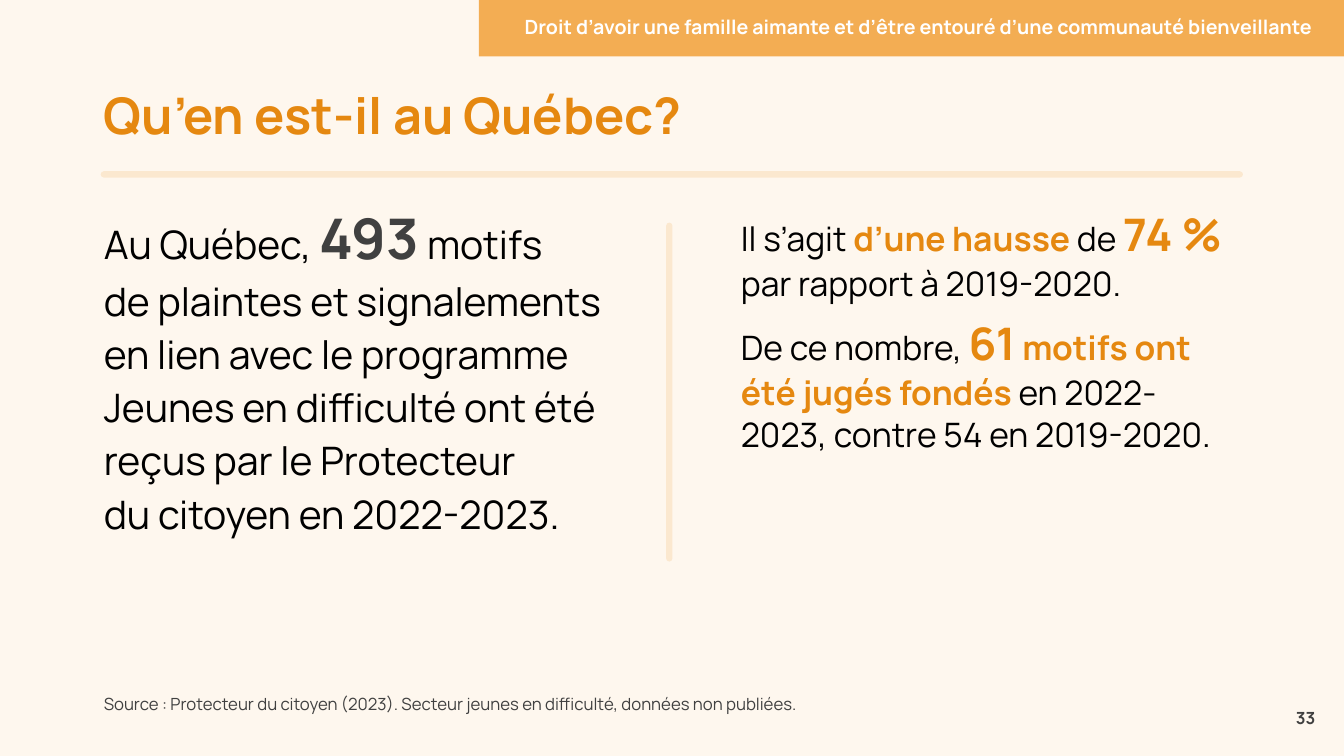
from lxml import etree
from pptx import Presentation
from pptx.dml.color import RGBColor
from pptx.enum.shapes import MSO_CONNECTOR, MSO_SHAPE
from pptx.enum.text import MSO_ANCHOR, MSO_AUTO_SIZE, PP_ALIGN
from pptx.oxml.ns import qn
from pptx.util import Pt

STRAIGHT = MSO_CONNECTOR.STRAIGHT
RECT = MSO_SHAPE.RECTANGLE
TOP, MIDDLE, BOTTOM = MSO_ANCHOR.TOP, MSO_ANCHOR.MIDDLE, MSO_ANCHOR.BOTTOM
LEFT, RIGHT = PP_ALIGN.LEFT, PP_ALIGN.RIGHT
NO_AUTOSIZE = MSO_AUTO_SIZE.NONE

COLORS = {
    "background": "FEF7EE",
    "band": "F3AD53",
    "accent": "E58810",
    "gray": "404040",
    "black": "000000",
    "white": "FFFFFF",
}
FONT = "Manrope"
MARGIN = 74.16


def rgb(name):
    return RGBColor.from_string(COLORS[name])


class SlideBuilder:
    def __init__(self, prs):
        self.slide = prs.slides.add_slide(prs.slide_layouts[5])
        fill = self.slide.background.fill
        fill.solid()
        fill.fore_color.rgb = rgb("background")

    def fill_text(self, sp, paragraphs, anchor=TOP, insets=(0, 0, 0, 0), **para_format):
        tf = sp.text_frame
        left, top, right, bottom = map(Pt, insets)
        frame_format = {
            "word_wrap": True, "auto_size": NO_AUTOSIZE, "vertical_anchor": anchor,
            "margin_left": left, "margin_top": top,
            "margin_right": right, "margin_bottom": bottom,
        }
        for name, value in frame_format.items():
            setattr(tf, name, value)
        for i, runs in enumerate(paragraphs):
            p = tf.add_paragraph() if i else tf.paragraphs[0]
            for name, value in {"alignment": LEFT, "space_before": Pt(0), **para_format}.items():
                setattr(p, name, value)
            for text, size, color, bold in runs:
                for j, line in enumerate(text.split("\n")):
                    if j:
                        p.add_line_break()
                    r = p.add_run()
                    r.text = line
                    for name, value in {"name": FONT, "size": Pt(size), "bold": bold}.items():
                        setattr(r.font, name, value)
                    r.font.color.rgb = rgb(color)

    def title(self, box, paragraphs, **options):
        sp = self.slide.shapes.title
        for name, value in zip(("left", "top", "width", "height"), box):
            setattr(sp, name, Pt(value))
        self.fill_text(sp, paragraphs, **options)

    def text(self, box, paragraphs, **options):
        self.fill_text(self.slide.shapes.add_textbox(*map(Pt, box)), paragraphs, **options)

    def band(self, box, paragraphs, **options):
        sp = self.slide.shapes.add_shape(RECT, *map(Pt, box))
        sp.shadow.inherit = False
        sp.fill.solid()
        sp.fill.fore_color.rgb = rgb("band")
        sp.line.fill.background()
        self.fill_text(sp, paragraphs, **options)

    def rule(self, *ends):
        line = self.slide.shapes.add_connector(STRAIGHT, *map(Pt, ends))
        line.line.width = Pt(4.5)
        line.line.color.rgb = rgb("band")
        sp_pr = line._element.spPr
        etree.SubElement(sp_pr, qn("a:effectLst"))
        sp_pr.find(qn("a:ln")).set("cap", "rnd")
        color = next(sp_pr.iter(qn("a:srgbClr")))
        etree.SubElement(color, qn("a:alpha")).set("val", "20000")


def main():
    prs = Presentation()
    prs.slide_width, prs.slide_height = Pt(960), Pt(540)
    s = SlideBuilder(prs)

    s.title((MARGIN, 52.56, 771.84, 64.08),
            [[("Qu’en est-il au Québec?", 36, "accent", True)]],
            anchor=MIDDLE, line_spacing=0.9)
    s.rule(MARGIN, 124.56, 885.6, 124.56)
    s.text((MARGIN, 465.84, 592.56, 43.92),
           [[("Source : Protecteur du citoyen (2023). Secteur jeunes en difficulté, "
              "données non publiées.", 12, "gray", False)]],
           anchor=BOTTOM, line_spacing=1.1)
    s.text((299.52, 505.44, 640.08, 15.12), [[("33", 12, "gray", True)]],
           anchor=MIDDLE, alignment=RIGHT)
    s.rule(478.08, 398.88, 478.08, 161.28)
    s.text((MARGIN, 155.52, 361.44, 266.4),
           [[("Au Québec, ", 28, "black", False),
             ("493", 40, "gray", True),
             (" motifs \nde plaintes et signalements en lien avec le programme "
              "Jeunes en difficulté ont été reçus par le Protecteur \n"
              "du citoyen en 2022-2023.", 28, "black", False)]],
           line_spacing=Pt(38), space_after=Pt(12))
    s.text((529.2, 156.24, 356.4, 166.32),
           [[("Il s’agit ", 24, "black", False),
             ("d’une hausse ", 24, "accent", True),
             ("de ", 24, "black", False),
             ("74 % ", 32, "accent", True),
             ("par rapport à 2019-2020.", 24, "black", False)],
            [("De ce nombre, ", 24, "black", False),
             ("61", 32, "accent", True),
             (" ", 24, "accent", False),
             ("motifs ont été jugés fondés ", 24, "accent", True),
             ("en 2022-2023, contre 54 en 2019-2020.", 24, "black", False)]],
           line_spacing=Pt(30), space_after=Pt(18))
    s.band((342, 0, 618, 40.32),
           [[("Droit d’avoir une famille aimante et d’être entouré "
              "d’une communauté bienveillante", 14, "white", True)]],
           anchor=MIDDLE, insets=(0, 3.6, 22.32, 3.6), alignment=RIGHT, line_spacing=0.9)

    prs.save("out.pptx")


if __name__ == "__main__":
    main()
